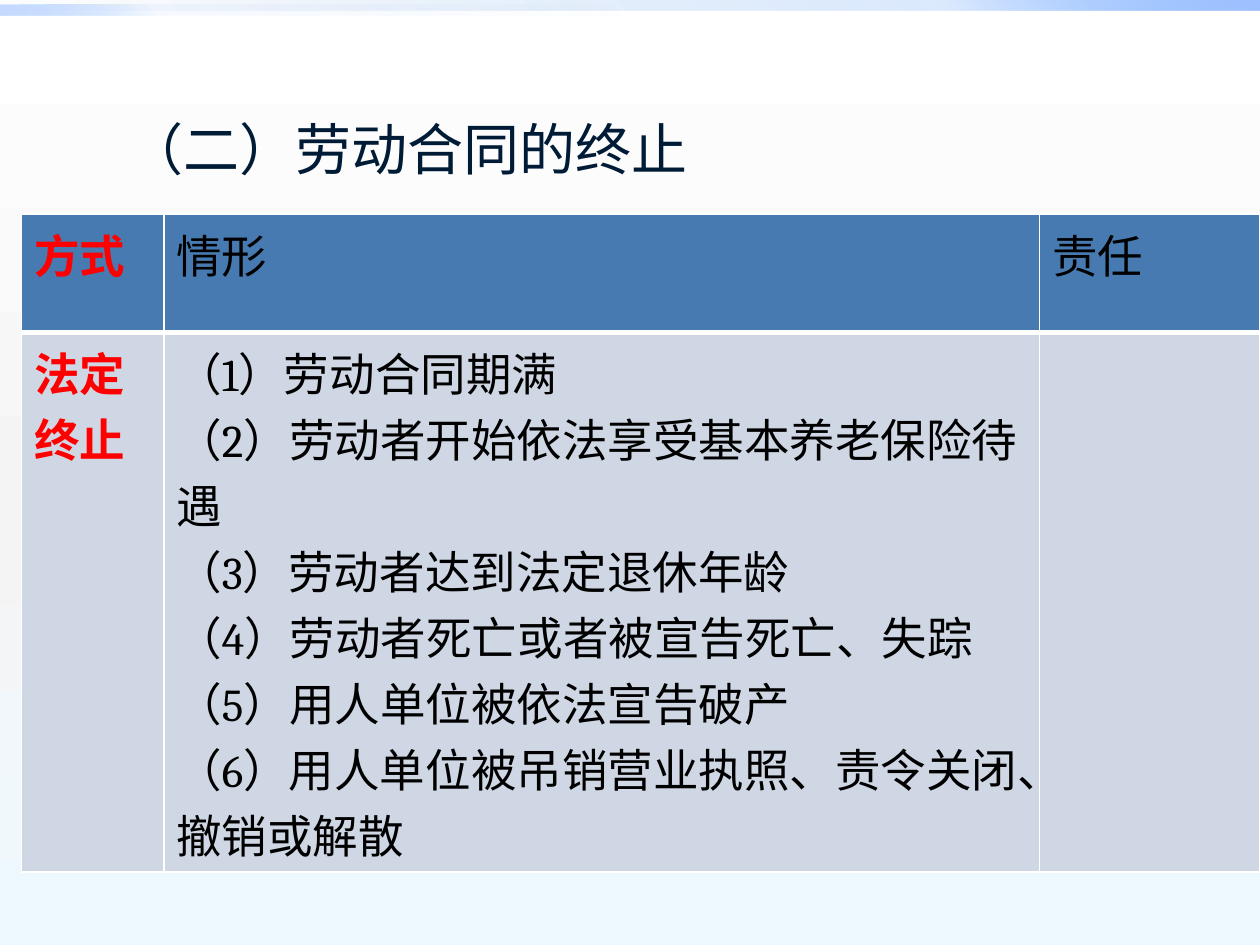
from lxml import etree
from pptx import Presentation
from pptx.dml.color import RGBColor
from pptx.enum.shapes import MSO_SHAPE
from pptx.enum.text import MSO_ANCHOR
from pptx.oxml.ns import qn
from pptx.util import Inches, Pt

RECTANGLE = MSO_SHAPE.RECTANGLE
MIDDLE = MSO_ANCHOR.MIDDLE
BLANK_LAYOUT = 6
WHITE, BLACK, RED = "FFFFFF", "000000", "FF0000"
HEADER_FILL, BODY_FILL = "477AB1", "CFD7E4"

COLUMN_WIDTHS = [1.13, 6.95, 1.75]
ROW_HEIGHTS = [0.94, 4.28]
ROWS = [
    [["方式"], ["情形"], ["责任"]],
    [
        ["法定终止"],
        [
            "（1）劳动合同期满",
            "（2）劳动者开始依法享受基本养老保险待遇",
            "（3）劳动者达到法定退休年龄",
            "（4）劳动者死亡或者被宣告死亡、失踪",
            "（5）用人单位被依法宣告破产",
            "（6）用人单位被吊销营业执照、责令关闭、撤销或解散",
        ],
        [],
    ],
]


def rgb(value):
    return RGBColor.from_string(value)


def add_color(parent, value, opacity=100):
    color = etree.SubElement(parent, qn("a:srgbClr"), val=value)
    if opacity < 100:
        etree.SubElement(color, qn("a:alpha"), val=str(opacity * 1000))


def set_gradient(fill, element, angle, stops):
    fill.gradient()
    fill.gradient_angle = angle
    stop_list = element.find(".//" + qn("a:gsLst"))
    for stop in list(stop_list):
        stop_list.remove(stop)
    for position, *color in stops:
        stop = etree.SubElement(stop_list, qn("a:gs"), pos=str(position * 1000))
        add_color(stop, *color)


def set_font(paragraph, name, size, color, bold=False):
    font = paragraph.font
    font.name, font.size, font.bold = name, Pt(size), bold
    font.color.rgb = rgb(color)


def set_borders(cell, bottom_width):
    properties = cell._tc.get_or_add_tcPr()
    widths = {"a:lnL": 1, "a:lnR": 1, "a:lnT": 1, "a:lnB": bottom_width}
    for index, (tag, width) in enumerate(widths.items()):
        line = etree.Element(qn(tag), w=str(Pt(width)))
        add_color(etree.SubElement(line, qn("a:solidFill")), WHITE)
        properties.insert(index, line)


def add_bar(slide, box, angle, stops):
    shape = slide.shapes.add_shape(RECTANGLE, *map(Inches, box))
    shape.shadow.inherit = False
    shape.line.fill.background()
    set_gradient(shape.fill, shape.element, angle, stops)


def add_backdrop(slide):
    set_gradient(slide.background.fill, slide.element, 270,
                 [(0, WHITE), (55, "F4F4F4"), (100, "EEF9FF")])
    add_bar(slide, (0, 0, 10, 0.08), 45,
            [(0, "0058B7", 0), (75, "4F95FF", 20), (100, "9EC2FF")])
    add_bar(slide, (0, 0.04, 5, 0.08), 225,
            [(0, "0058B7", 0), (75, "4F95FF", 5), (100, "9EC2FF", 60)])


def add_title(slide, box, text):
    frame = slide.shapes.add_textbox(*map(Inches, box)).text_frame
    frame.word_wrap = True
    frame.vertical_anchor = MIDDLE
    frame.text = text
    set_font(frame.paragraphs[0], "Roboto", 32, "001B36")


def add_termination_table(slide, box):
    table = slide.shapes.add_table(
        len(ROWS), len(COLUMN_WIDTHS), *map(Inches, box)).table
    for column, width in zip(table.columns, COLUMN_WIDTHS):
        column.width = Inches(width)
    for row_index, (row, height) in enumerate(zip(table.rows, ROW_HEIGHTS)):
        row.height = Inches(height)
        is_header = row_index == 0
        for column_index, cell in enumerate(row.cells):
            is_label = column_index == 0
            cell.fill.solid()
            cell.fill.fore_color.rgb = rgb(HEADER_FILL if is_header else BODY_FILL)
            set_borders(cell, 3 if is_header else 1)
            cell.text = "\n".join(ROWS[row_index][column_index])
            for paragraph in cell.text_frame.paragraphs:
                set_font(paragraph, "Cambria", 26, RED if is_label else BLACK, is_label)


def main():
    presentation = Presentation()
    presentation.slide_width, presentation.slide_height = Inches(10), Inches(7.5)
    slide = presentation.slides.add_slide(presentation.slide_layouts[BLANK_LAYOUT])
    add_backdrop(slide)
    add_title(slide, (0.91, 0.76, 8.52, 0.83), "（二）劳动合同的终止")
    add_termination_table(slide, (0.17, 1.7, sum(COLUMN_WIDTHS), sum(ROW_HEIGHTS)))
    presentation.save("out.pptx")


if __name__ == "__main__":
    main()
